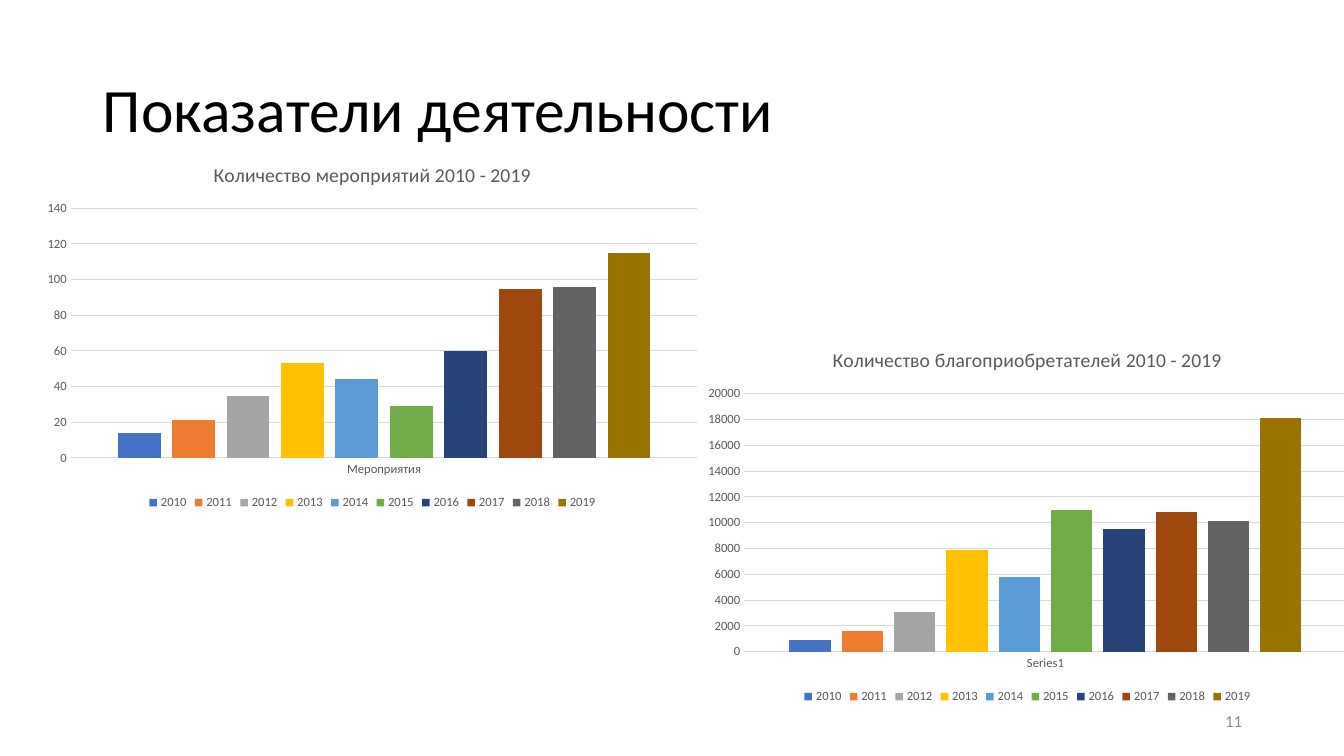
from pptx import Presentation
from pptx import util as u
from pptx.chart.data import CategoryChartData
from pptx.dml.color import RGBColor
from pptx.enum import chart as charts, text

# Content
TITLE = "Показатели деятельности"
PAGE_NUMBER = "11"
YEARS = range(2010, 2020)
CHARTS = [
    {"title": "Количество мероприятий 2010 - 2019", "category": "Мероприятия",
     "box": (34, 145, 677, 369), "top": 140, "step": 20,
     "values": (14, 21, 35, 53, 44, 29, 60, 95, 96, 115)},
    {"title": "Количество благоприобретателей 2010 - 2019", "category": "Series1",
     "box": (695, 330, 665, 378), "top": 20000, "step": 2000,
     "values": (900, 1600, 3100, 7900, 5800, 11000, 9500, 10800, 10100, 18100)},
]

# Format
FONT = "Calibri"
BLACK = RGBColor(0x00, 0x00, 0x00)
DARK_GRAY = RGBColor(0x59, 0x59, 0x59)
NUMBER_GRAY = RGBColor(0x8C, 0x8C, 0x8C)
LINE_GRAY = RGBColor(0xD9, 0xD9, 0xD9)
YEAR_COLORS = [RGBColor.from_string(code) for code in (
    "4472C4", "ED7D31", "A5A5A5", "FFC000", "5B9BD5",
    "70AD47", "264478", "9E480E", "636363", "997300")]
SLIDE_SIZE = (1344, 756)
PX = u.Inches(7.5) / 756


def emu(lengths):
    return [round(length * PX) for length in lengths]


def set_font(font, size, color):
    font.name, font.size, font.bold = FONT, u.Pt(size), False
    font.color.rgb = color


def add_text(slide, content, box, size, color, align=text.PP_ALIGN.LEFT, spacing=1.0):
    frame = slide.shapes.add_textbox(*emu(box)).text_frame
    frame.word_wrap = True
    frame.vertical_anchor = text.MSO_ANCHOR.MIDDLE
    paragraph = frame.paragraphs[0]
    paragraph.alignment, paragraph.line_spacing = align, spacing
    run = paragraph.add_run()
    run.text = content
    set_font(run.font, size, color)


def style_line(line):
    line.color.rgb = LINE_GRAY
    line.width = u.Pt(0.75)


def add_year_chart(slide, details):
    data = CategoryChartData()
    data.categories = [details["category"]]
    for year, value in zip(YEARS, details["values"]):
        data.add_series(str(year), [value])
    chart = slide.shapes.add_chart(
        charts.XL_CHART_TYPE.COLUMN_CLUSTERED, *emu(details["box"]), data).chart
    set_font(chart.font, 10, BLACK)

    # Title and legend
    chart.has_title = True
    chart.chart_title.include_in_layout = False
    title = chart.chart_title.text_frame
    title.text = details["title"]
    set_font(title.paragraphs[0].runs[0].font, 14, DARK_GRAY)
    chart.has_legend = True
    chart.legend.position = charts.XL_LEGEND_POSITION.BOTTOM
    chart.legend.include_in_layout = False
    set_font(chart.legend.font, 9, DARK_GRAY)

    # Axes
    for axis in (chart.category_axis, chart.value_axis):
        axis.major_tick_mark = axis.minor_tick_mark = charts.XL_TICK_MARK.NONE
        set_font(axis.tick_labels.font, 9, DARK_GRAY)
    style_line(chart.category_axis.format.line)
    values = chart.value_axis
    values.minimum_scale, values.maximum_scale = 0, details["top"]
    values.major_unit = details["step"]
    values.format.line.fill.background()
    values.has_major_gridlines = True
    style_line(values.major_gridlines.format.line)

    # Columns
    plot = chart.plots[0]
    plot.gap_width, plot.overlap, plot.vary_by_categories = 219, -27, False
    for series, color in zip(plot.series, YEAR_COLORS):
        series.format.fill.solid()
        series.format.fill.fore_color.rgb = color


def main():
    presentation = Presentation()
    presentation.slide_width, presentation.slide_height = emu(SLIDE_SIZE)
    slide = presentation.slides.add_slide(presentation.slide_layouts[6])
    add_text(slide, TITLE, (93, 40, 1159, 146), size=44, color=BLACK, spacing=0.9)
    for details in CHARTS:
        add_year_chart(slide, details)
    add_text(slide, PAGE_NUMBER, (950, 701, 302, 40), size=12, color=NUMBER_GRAY,
             align=text.PP_ALIGN.RIGHT)
    presentation.save("out.pptx")


if __name__ == "__main__":
    main()
